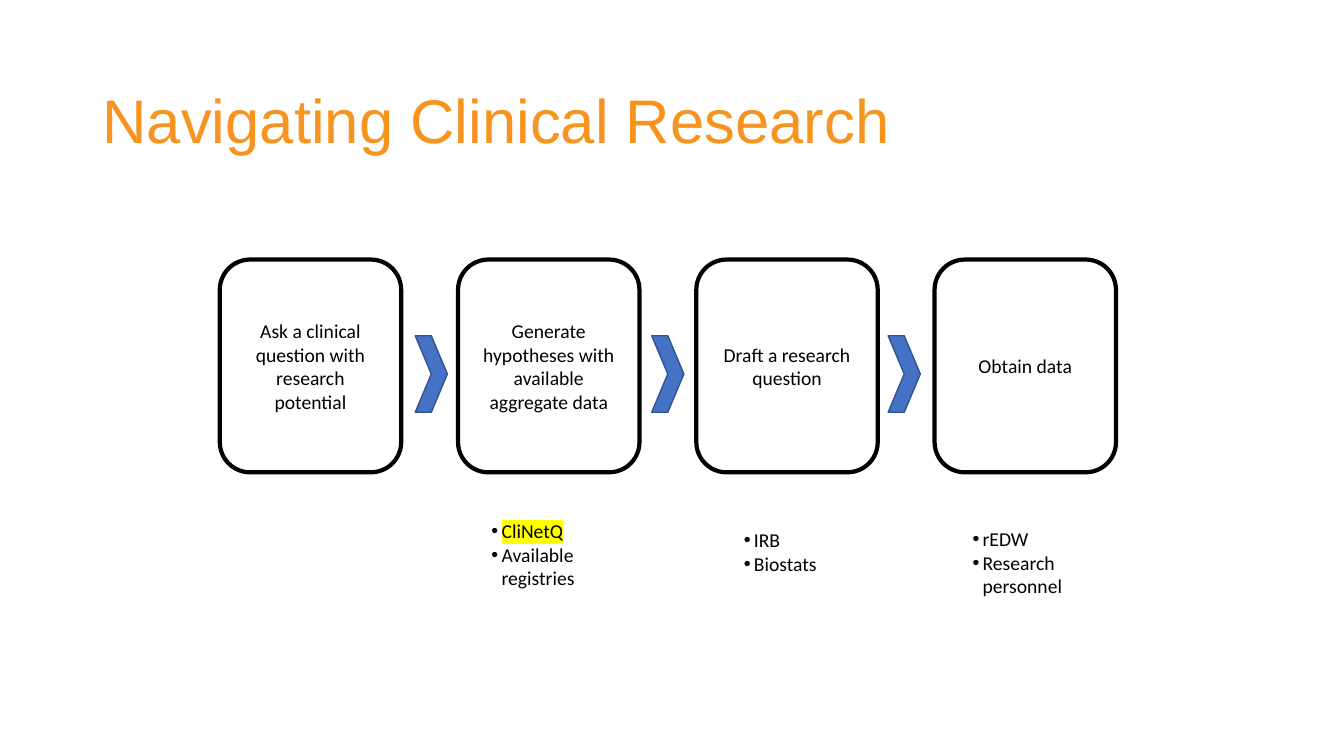
"""Build the clinical research navigation slide."""
import lxml.etree
import pptx
import pptx.dml.color
import pptx.enum.shapes
import pptx.enum.text
import pptx.oxml.ns
import pptx.util

Pt = pptx.util.Pt
SHAPE = pptx.enum.shapes.MSO_SHAPE
ALIGN = pptx.enum.text.PP_ALIGN
ANCHOR = pptx.enum.text.MSO_ANCHOR
qn = pptx.oxml.ns.qn

STEPS = [
    "Ask a clinical question with research potential",
    "Generate hypotheses with available aggregate data",
    "Draft a research question",
    "Obtain data",
]
RESOURCES = [
    ((344, 367.2, 115.2, 58.3), ["CliNetQ", "Available registries"]),
    ((524.2, 373.7, 108.7, 41), ["IRB", "Biostats"]),
    ((687.6, 373, 115.2, 58.3), ["rEDW", "Research personnel"]),
]
HIGHLIGHTED = "CliNetQ"


def color(value):
    """Turn a hex string into a colour."""
    return pptx.dml.color.RGBColor.from_string(value)


def set_font(para, name, size, ink):
    """Give a paragraph its font, size and colour."""
    para.font.name = name
    para.font.size = Pt(size)
    para.font.color.rgb = color(ink)


def add_title(page, box, text):
    """Place the title in its placeholder."""
    title = page.shapes.title
    title.left, title.top, title.width, title.height = map(Pt, box)
    title.text_frame.text = text
    title.text_frame.vertical_anchor = ANCHOR.MIDDLE
    para = title.text_frame.paragraphs[0]
    para.alignment = ALIGN.LEFT
    para.line_spacing = 0.9
    set_font(para, "Arial", 44, "F6941F")


def add_outlined(page, kind, box, fill, line, weight):
    """Add a flat preset shape with a fill and an outline."""
    shape = page.shapes.add_shape(kind, *map(Pt, box))
    shape.shadow.inherit = False
    shape.fill.solid()
    shape.fill.fore_color.rgb = color(fill)
    shape.line.color.rgb = color(line)
    shape.line.width = Pt(weight)
    return shape


def add_steps(page, box, steps):
    """Spread the step cards over the box, with a chevron in each gap."""
    left, top, width, height = box
    card_width, chevron_width, chevron_height = 129.6, 23, 54.7
    pitch = (width - card_width) / (len(steps) - 1)
    for index, step in enumerate(steps):
        card_box = (left + index * pitch, top, card_width, height)
        card = add_outlined(page, SHAPE.ROUNDED_RECTANGLE, card_box, "FFFFFF", "000000", 3)
        card.text_frame.word_wrap = True
        card.text_frame.vertical_anchor = ANCHOR.MIDDLE
        card.text_frame.text = step
        para = card.text_frame.paragraphs[0]
        para.alignment = ALIGN.CENTER
        set_font(para, "Calibri", 14, "000000")
    for index in range(len(steps) - 1):
        chevron_box = (left + 139.6 + index * 168.9, top + 54.4, chevron_width, chevron_height)
        add_outlined(page, SHAPE.CHEVRON, chevron_box, "4472C4", "325491", 1)


def add_bullet(para):
    """Give a paragraph a hanging round bullet."""
    properties = para._p.get_or_add_pPr()
    properties.set("marL", str(Pt(7.2)))
    properties.set("indent", str(-Pt(7.2)))
    lxml.etree.SubElement(properties, qn("a:buFont")).set("typeface", "Arial")
    lxml.etree.SubElement(properties, qn("a:buChar")).set("char", "•")


def highlight(span, value):
    """Mark a run with a background colour."""
    marker = lxml.etree.SubElement(span.font._element, qn("a:highlight"))
    lxml.etree.SubElement(marker, qn("a:srgbClr")).set("val", value)


def add_resources(page, box, items):
    """Add a bulleted list of resources."""
    frame = page.shapes.add_textbox(*map(Pt, box)).text_frame
    frame.word_wrap = True
    frame.auto_size = pptx.enum.text.MSO_AUTO_SIZE.SHAPE_TO_FIT_TEXT
    for index, item in enumerate(items):
        para = frame.add_paragraph() if index else frame.paragraphs[0]
        add_bullet(para)
        set_font(para, "Calibri", 14, "000000")
        span = para.add_run()
        span.text = item
        if item == HIGHLIGHTED:
            highlight(span, "FFFF00")


def main():
    """Build and save the deck."""
    deck = pptx.Presentation()
    deck.slide_width, deck.slide_height = Pt(960), Pt(540)
    page = deck.slides.add_slide(deck.slide_layouts.get_by_name("Title Only"))
    add_title(page, (66, 36, 828, 104.4), "Navigating Clinical Research")
    add_steps(page, (157, 185.4, 640.2, 152), STEPS)
    for box, items in RESOURCES:
        add_resources(page, box, items)
    deck.save("out.pptx")


if __name__ == "__main__":
    main()
